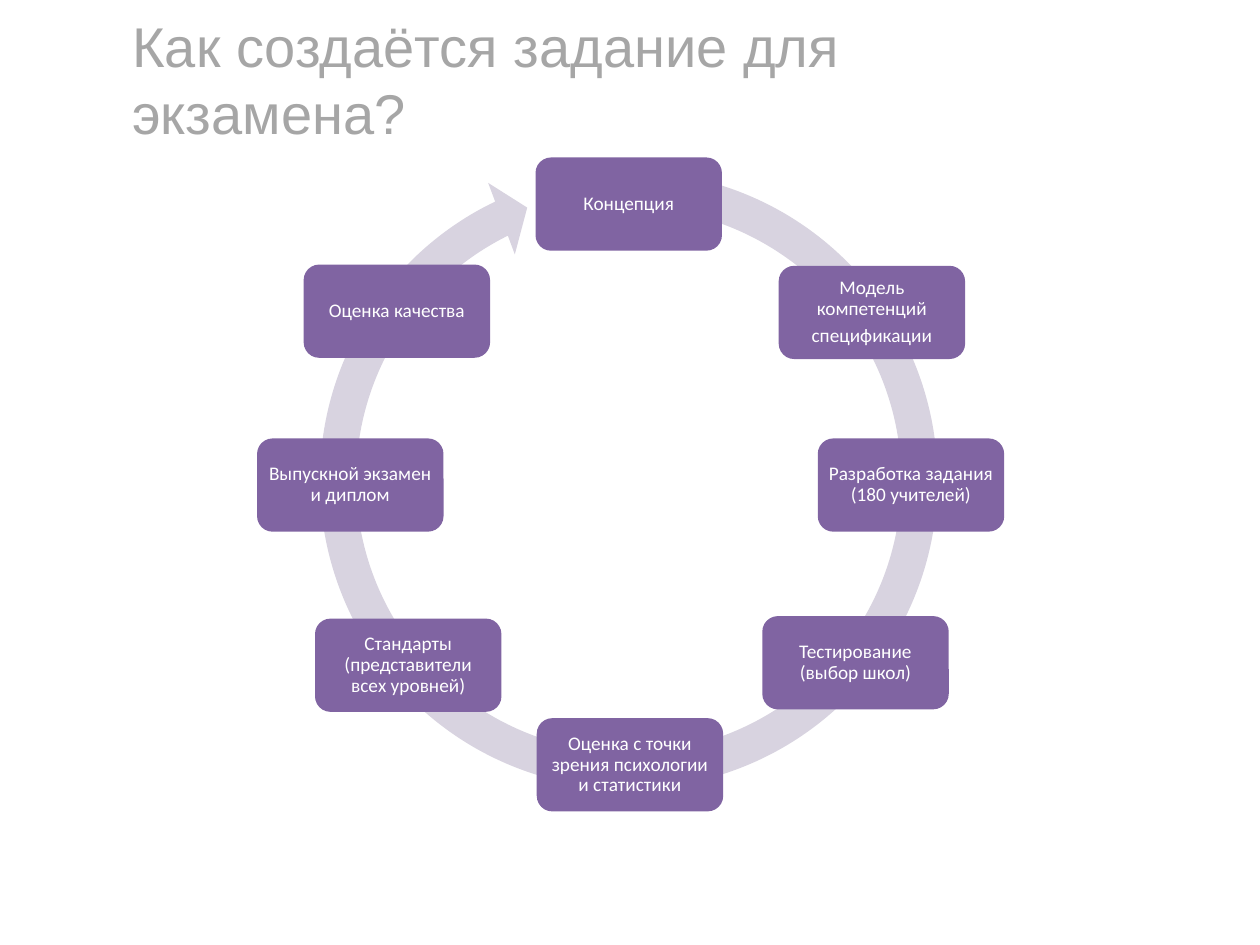
from pptx import Presentation
from pptx.dml.color import RGBColor
from pptx.enum import shapes, text
from pptx.util import Inches, Pt

TITLE = "Как создаётся задание для экзамена?"
STEP_SIZE = (1.48, 0.74)
# Left, top and paragraphs of each step, clockwise from the top
STEPS = [
    (4.25, 1.25, ["Концепция"]),
    (6.18, 2.11, ["Модель компетенций", "спецификации"]),
    (6.49, 3.48, ["Разработка задания (180 учителей)"]),
    (6.05, 4.89, ["Тестирование (выбор школ)"]),
    (4.26, 5.7, ["Оценка с точки зрения психологии и статистики"]),
    (2.5, 4.91, ["Стандарты (представители всех уровней)"]),
    (2.04, 3.48, ["Выпускной экзамен и диплом"]),
    (2.41, 2.1, ["Оценка качества"]),
]
RING_ADJUSTMENTS = [0.055, 3.307, 146.432, 168.777, 0.058]
TITLE_FRAME = {
    "word_wrap": True,
    "auto_size": text.MSO_AUTO_SIZE.NONE,
    "vertical_anchor": text.MSO_ANCHOR.MIDDLE,
    "margin_right": Inches(0.2),
}
STEP_FRAME = {
    "word_wrap": True,
    "vertical_anchor": text.MSO_ANCHOR.MIDDLE,
    **{f"margin_{side}": Inches(0.05) for side in ("left", "top", "right", "bottom")},
}
STEP_PARAGRAPH = {
    "alignment": text.PP_ALIGN.CENTER,
    "line_spacing": 0.9,
    "space_after": Pt(3.85),
}


def color(value):
    return RGBColor.from_string(value)


def apply_format(target, values):
    for name, value in values.items():
        setattr(target, name, value)


def format_font(font, name, size, fill):
    apply_format(font, {"name": name, "size": Pt(size)})
    font.color.rgb = color(fill)


def set_title(slide):
    title = slide.shapes.title
    apply_format(title, {"left": Inches(0.95), "top": Inches(0),
                         "width": Inches(8.1), "height": Inches(1.25)})
    apply_format(title.text_frame, TITLE_FRAME)
    paragraph = title.text_frame.paragraphs[0]
    paragraph.alignment = text.PP_ALIGN.LEFT
    run = paragraph.add_run()
    run.text = TITLE
    format_font(run.font, "Arial", 32, "A6A6A6")


def add_filled_shape(slide, kind, left, top, width, height, fill):
    shape = slide.shapes.add_shape(
        kind, Inches(left), Inches(top), Inches(width), Inches(height))
    shape.shadow.inherit = False
    shape.fill.solid()
    shape.fill.fore_color.rgb = color(fill)
    shape.line.fill.background()
    return shape


def add_ring(slide):
    ring = add_filled_shape(slide, shapes.MSO_SHAPE.CIRCULAR_ARROW,
                            2.38, 1.2, 5.22, 5.22, "D8D3E0")
    for index, value in enumerate(RING_ADJUSTMENTS):
        ring.adjustments[index] = value


def add_step(slide, left, top, lines):
    step = add_filled_shape(slide, shapes.MSO_SHAPE.ROUNDED_RECTANGLE,
                            left, top, *STEP_SIZE, "8064A2")
    frame = step.text_frame
    apply_format(frame, STEP_FRAME)
    frame.text = "\n".join(lines)
    for paragraph in frame.paragraphs:
        apply_format(paragraph, STEP_PARAGRAPH)
        format_font(paragraph.runs[0].font, "Calibri", 11, "FFFFFF")


def main():
    presentation = Presentation()
    presentation.slide_width = Inches(10)
    presentation.slide_height = Inches(7.5)
    slide = presentation.slides.add_slide(presentation.slide_layouts[5])
    set_title(slide)
    add_ring(slide)
    for step in STEPS:
        add_step(slide, *step)
    presentation.save("out.pptx")


if __name__ == "__main__":
    main()
